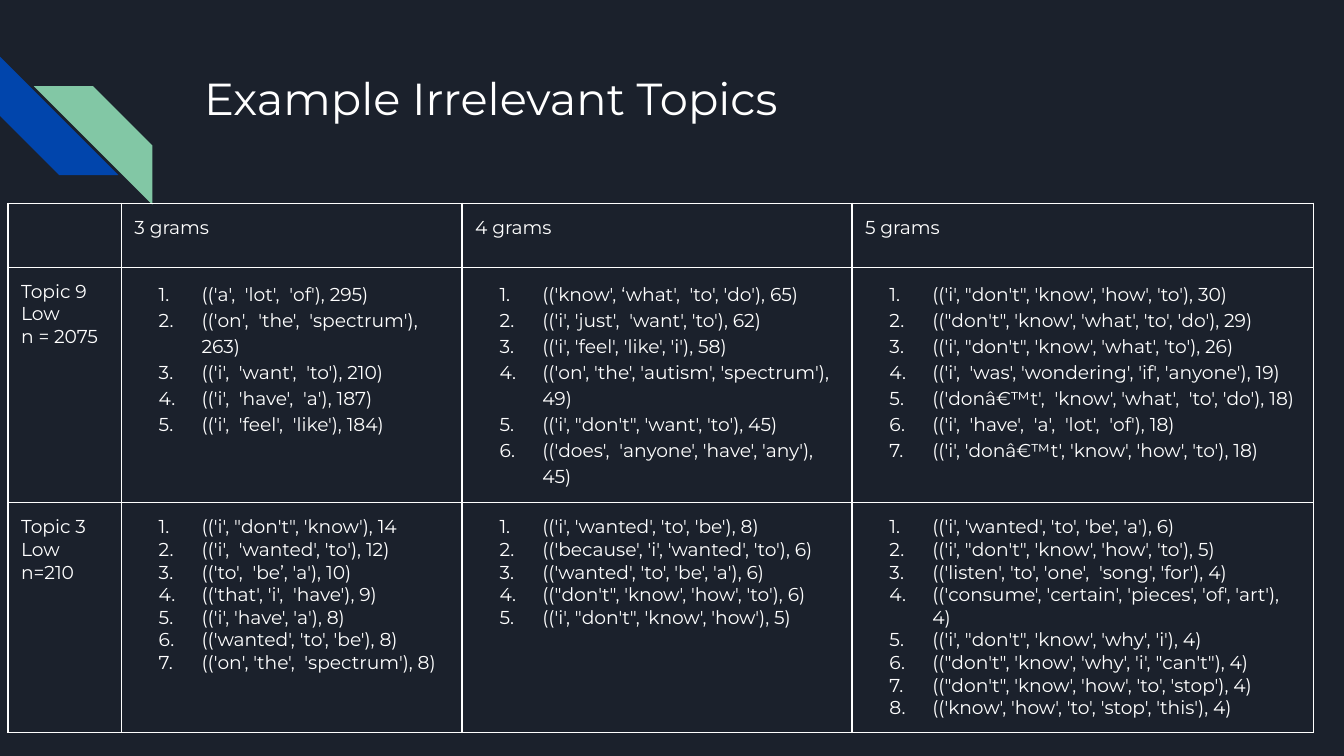
from lxml.etree import SubElement
from pptx import Presentation
from pptx.dml.color import RGBColor
from pptx.enum.shapes import MSO_SHAPE
from pptx.oxml import parse_xml
from pptx.oxml.ns import nsdecls, qn
from pptx.util import Cm, Pt

NAVY = RGBColor(0x1B, 0x21, 0x2C)
BLUE = RGBColor(0x01, 0x45, 0xAC)
GREEN = RGBColor(0x82, 0xC7, 0xA5)
WHITE = RGBColor(0xFF, 0xFF, 0xFF)
FONT = "Montserrat"
INSET = Cm(0.25)

HEADERS = ["", "3 grams", "4 grams", "5 grams"]
TOPICS = [
    (["Topic 9", "Low", "n = 2075"], 1.15, [
        ["(('a',  'lot',  'of'), 295)",
         "(('on',  'the',  'spectrum'),  263)",
         "(('i',  'want',  'to'), 210)",
         "(('i',  'have',  'a'), 187)",
         "(('i',  'feel',  'like'), 184)"],
        ["(('know', ‘what',  'to', 'do'), 65)",
         "(('i', 'just',  'want', 'to'), 62)",
         "(('i', 'feel', 'like', 'i'), 58)",
         "(('on', 'the', 'autism', 'spectrum'), 49)",
         "(('i', \"don't\", 'want', 'to'), 45)",
         "(('does',  'anyone', 'have', 'any'), 45)"],
        ["(('i', \"don't\", 'know', 'how', 'to'), 30)",
         "((\"don't\", 'know', 'what', 'to', 'do'), 29)",
         "(('i', \"don't\", 'know', 'what', 'to'), 26)",
         "(('i',  'was', 'wondering', 'if', 'anyone'), 19)",
         "(('donâ€™t',  'know', 'what',  'to', 'do'), 18)",
         "(('i',  'have',  'a',  'lot',  'of'), 18)",
         "(('i', 'donâ€™t', 'know', 'how', 'to'), 18)"],
    ]),
    (["Topic 3", "Low", "n=210"], 1.0, [
        ["(('i', \"don't\", 'know'), 14",
         "(('i',  'wanted', 'to'), 12)",
         "(('to',  'be’, 'a'), 10)",
         "(('that', 'i',  'have'), 9)",
         "(('i', 'have', 'a'), 8)",
         "(('wanted', 'to', 'be'), 8)",
         "(('on', 'the',  'spectrum'), 8)"],
        ["(('i', 'wanted', 'to', 'be'), 8)",
         "(('because', 'i', 'wanted', 'to'), 6)",
         "(('wanted', 'to', 'be', 'a'), 6)",
         "((\"don't\", 'know', 'how', 'to'), 6)",
         "(('i', \"don't\", 'know', 'how'), 5)"],
        ["(('i', 'wanted', 'to', 'be', 'a'), 6)",
         "(('i', \"don't\", 'know', 'how', 'to'), 5)",
         "(('listen', 'to', 'one',  'song', 'for'), 4)",
         "(('consume', 'certain', 'pieces', 'of', 'art'), 4)",
         "(('i', \"don't\", 'know', 'why', 'i'), 4)",
         "((\"don't\", 'know', 'why', 'i', \"can't\"), 4)",
         "((\"don't\", 'know', 'how', 'to', 'stop'), 4)",
         "(('know', 'how', 'to', 'stop', 'this'), 4)"],
    ]),
]


def write_lines(tf, lines, size, spacing=1.0, numbered=False):
    for i, line in enumerate(lines):
        p = tf.paragraphs[0] if i == 0 else tf.add_paragraph()
        if spacing != 1.0:
            p.line_spacing = spacing
        if numbered:
            pPr = p._p.get_or_add_pPr()
            pPr.set("marL", str(Cm(1.27)))
            pPr.set("indent", str(-Cm(0.81)))
            clr = SubElement(pPr, qn("a:buClr"))
            SubElement(clr, qn("a:srgbClr"), val=str(WHITE))
            SubElement(pPr, qn("a:buFont"), typeface=FONT)
            SubElement(pPr, qn("a:buAutoNum"), type="arabicPeriod")
        r = p.add_run()
        r.text = line
        r.font.size = Pt(size)
        r.font.name = FONT
        r.font.color.rgb = WHITE


def style_cell(cell):
    """Clear the fill and draw a thin white border on all four sides."""
    cell.fill.background()
    tcPr = cell._tc.get_or_add_tcPr()
    for i, side in enumerate(("lnL", "lnR", "lnT", "lnB")):
        tcPr.insert(i, parse_xml(
            f'<a:{side} {nsdecls("a")} w="{Pt(0.75)}"><a:solidFill>'
            f'<a:srgbClr val="{WHITE}"/></a:solidFill></a:{side}>'))


prs = Presentation()
prs.slide_width = Cm(25.4)
prs.slide_height = Cm(14.29)
s = prs.slides.add_slide(prs.slide_layouts[6])
s.background.fill.solid()
s.background.fill.fore_color.rgb = NAVY

# Corner stripes
stripes = []
for x, y, color in ((0, 1.07, BLUE), (0.64, 1.63, GREEN)):
    sp = s.shapes.add_shape(MSO_SHAPE.DIAGONAL_STRIPE, Cm(x), Cm(y), Cm(2.24), Cm(2.24))
    sp.shadow.inherit = False
    sp.fill.solid()
    sp.fill.fore_color.rgb = color
    sp.line.fill.background()
    stripes.append(sp)
stripes[0].rotation = 270
stripes[1]._element.spPr.find(qn("a:xfrm")).set("flipH", "1")

# Title
title = s.shapes.add_textbox(Cm(3.61), Cm(1.09), Cm(19.56), Cm(2.54))
tf = title.text_frame
tf.word_wrap = True
tf.margin_left = tf.margin_right = tf.margin_top = tf.margin_bottom = INSET
write_lines(tf, ["Example Irrelevant Topics"], 24)

# Table of n-grams
col_widths = [2.14, 6.44, 7.37, 8.73]
row_heights = [1.21, 4.45, 4.34]
table = s.shapes.add_table(len(row_heights), len(col_widths), Cm(0.15), Cm(3.84),
                           Cm(sum(col_widths)), Cm(sum(row_heights))).table
table.first_row = table.horz_banding = False
for col, width in zip(table.columns, col_widths):
    col.width = Cm(width)
for row, height in zip(table.rows, row_heights):
    row.height = Cm(height)

for cell in table.iter_cells():
    style_cell(cell)

for c, header in enumerate(HEADERS):
    if header:
        write_lines(table.cell(0, c).text_frame, [header], 10)
for r, (label, spacing, columns) in enumerate(TOPICS, 1):
    write_lines(table.cell(r, 0).text_frame, label, 10)
    for c, grams in enumerate(columns, 1):
        write_lines(table.cell(r, c).text_frame, grams, 10, spacing, numbered=True)

for cell in table.iter_cells():
    if cell.text_frame.text:
        cell.margin_left = cell.margin_right = INSET
        cell.margin_top = cell.margin_bottom = INSET

prs.save("out.pptx")
